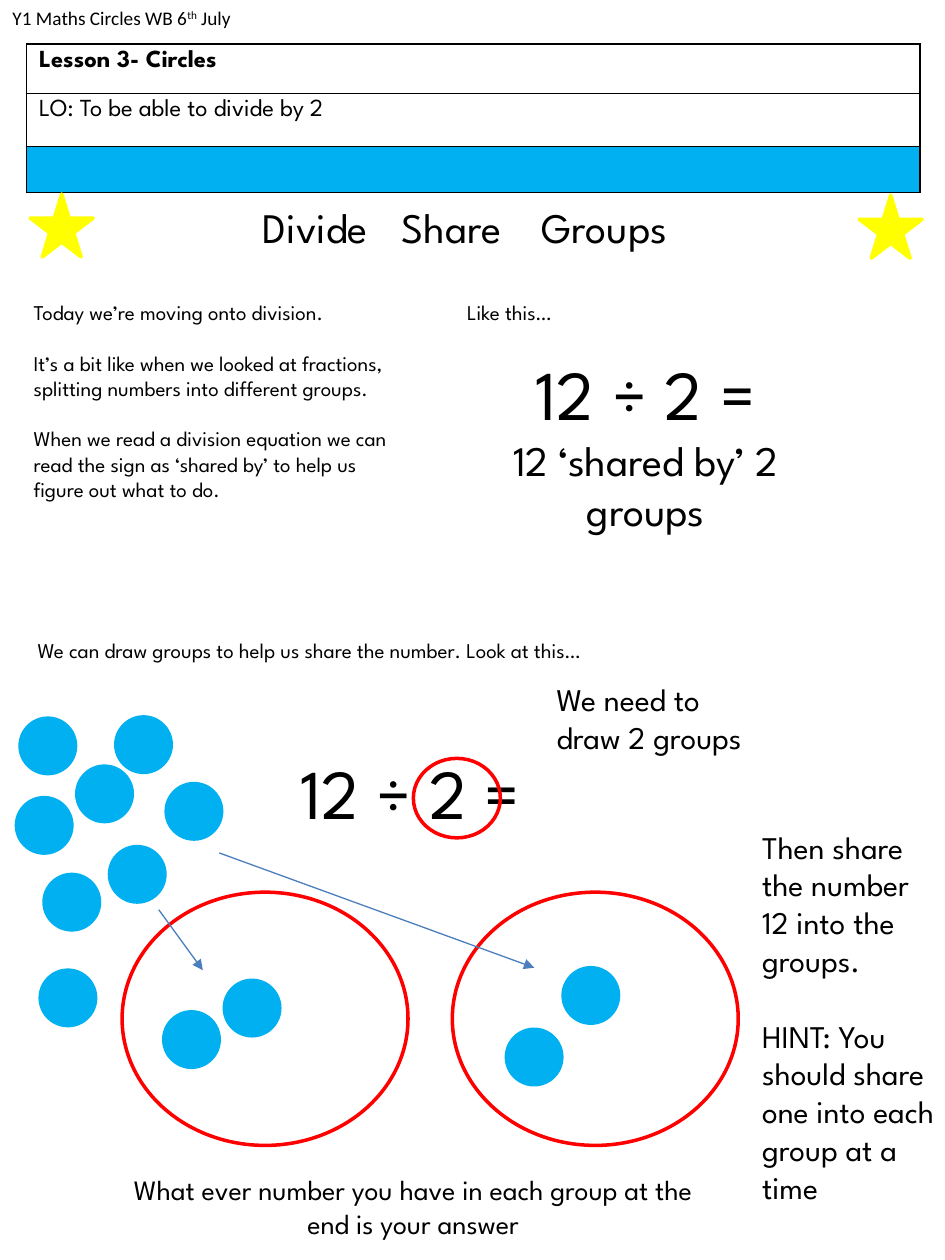
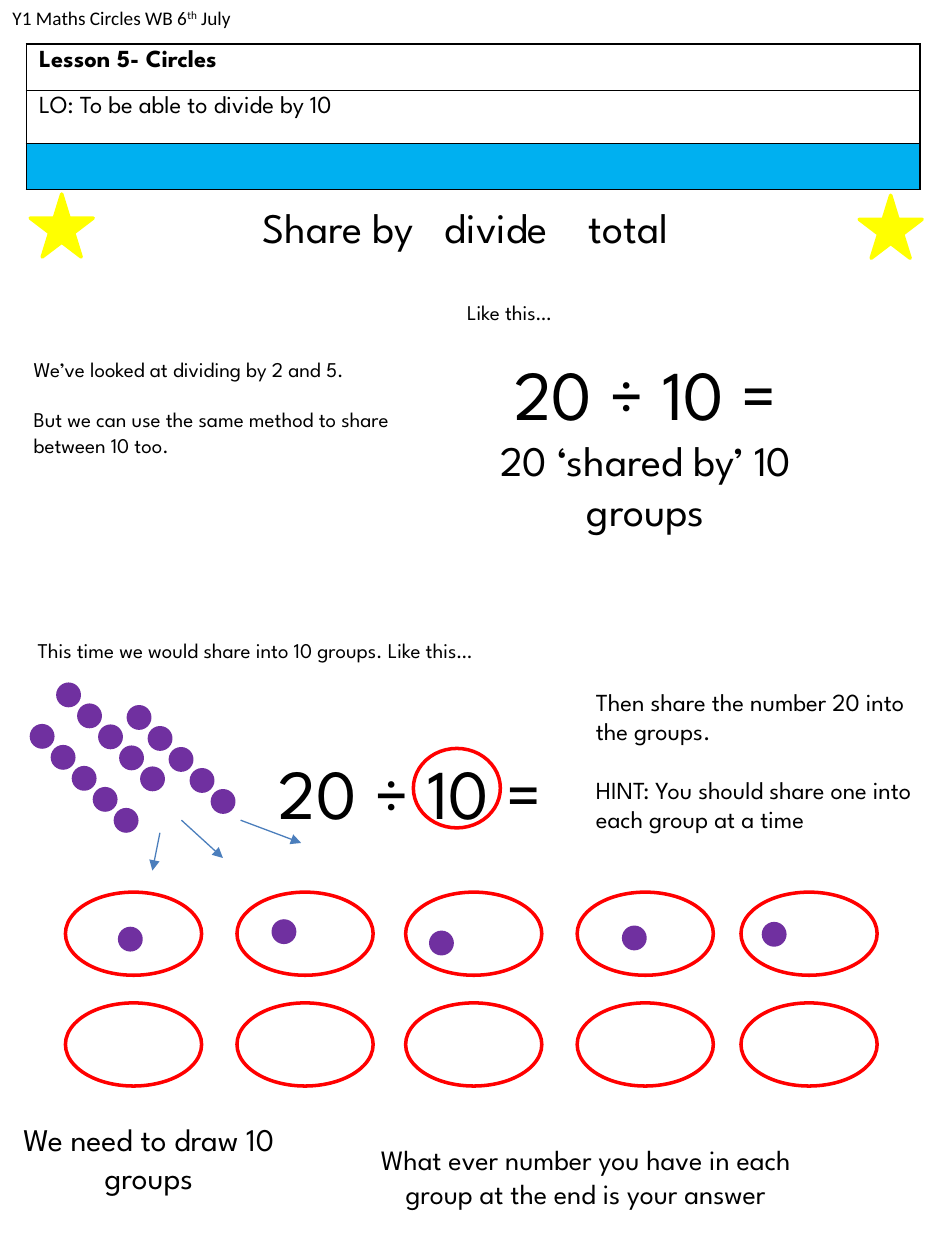
from dataclasses import dataclass

from lxml import etree
from pptx import Presentation
from pptx.dml.color import RGBColor
from pptx.enum import shapes, text
from pptx.oxml import ns
from pptx.util import Pt


@dataclass(frozen=True)
class Theme:
    font: str = "League Spartan"
    header_font: str = "Calibri"
    ink: str = "000000"
    sky: str = "00B0F0"
    purple: str = "7030A0"
    star: str = "FFFF00"
    ring: str = "FF0000"
    arrow: str = "4B7EBC"
    header: int = 11
    body: int = 12
    heading: int = 14
    answer: int = 16
    prompt: int = 18
    keyword: int = 24
    equation: int = 40
    outline: float = 2
    blank_line: float = 1.2  # paragraph gap relative to type size


THEME = Theme()
LEFT, CENTER = text.PP_ALIGN.LEFT, text.PP_ALIGN.CENTER
MSO = shapes.MSO_SHAPE


def rgb(value):
    return RGBColor.from_string(value)


def points(*values):
    return [Pt(value) for value in values]


def style(paragraph, size, align=LEFT, face=THEME.font, bold=False):
    paragraph.alignment = align
    font = paragraph.font
    font.name, font.size, font.bold = face, Pt(size), bold
    font.color.rgb = rgb(THEME.ink)


# Text
def add_box(slide, box):
    frame = slide.shapes.add_textbox(*points(*box)).text_frame
    frame.word_wrap = True
    return frame


def add_text(slide, box, size, *lines, align=LEFT):
    """Add paragraphs separated by the height of one line."""
    frame = add_box(slide, box)
    for index, line in enumerate(lines):
        paragraph = frame.paragraphs[0] if index == 0 else frame.add_paragraph()
        paragraph.text = line
        style(paragraph, size, align)
        if index:
            paragraph.space_before = Pt(size * THEME.blank_line)
    return frame


def add_header(slide):
    paragraph = add_box(slide, (0, 0, 287.3, 20.9)).paragraphs[0]
    style(paragraph, THEME.header, face=THEME.header_font)
    for words in ("Y1 Maths Circles WB 6", "th", " July"):
        run = paragraph.add_run()
        run.text = words
        if words == "th":
            run._r.get_or_add_rPr().set("baseline", "30000")


def add_keywords(slide, words, stops):
    """Put the keywords in the title, spaced with tab stops."""
    title = slide.shapes.title
    title.left, title.top, title.width, title.height = points(12.2, 111.6, 510.5, 36)
    frame = title.text_frame
    frame.auto_size = text.MSO_AUTO_SIZE.NONE
    frame.vertical_anchor = text.MSO_ANCHOR.TOP
    frame.margin_left = Pt(138)
    paragraph = frame.paragraphs[0]
    paragraph.text = "\t".join(words)
    style(paragraph, THEME.keyword)
    properties = paragraph._p.get_or_add_pPr()
    tabs = etree.Element(ns.qn("a:tabLst"))
    for stop in stops:
        etree.SubElement(tabs, ns.qn("a:tab"), pos=str(Pt(stop)), algn="l")
    properties.find(ns.qn("a:defRPr")).addprevious(tabs)


def add_example(slide, equation, reading):
    frame = add_text(slide, (259.9, 167.8, 218.2, 172), THEME.body, "Like this…")
    for line, size in ((equation, THEME.equation), (reading, THEME.keyword)):
        paragraph = frame.add_paragraph()
        paragraph.text = line
        style(paragraph, size, CENTER)
    frame.paragraphs[1].space_before = Pt(THEME.body * THEME.blank_line)


# Lesson table
def add_borders(cell):
    properties = cell._tc.get_or_add_tcPr()
    for side in ("lnL", "lnR", "lnT", "lnB"):
        edge = etree.SubElement(properties, ns.qn(f"a:{side}"), w=str(Pt(1)))
        fill = etree.SubElement(edge, ns.qn("a:solidFill"))
        etree.SubElement(fill, ns.qn("a:srgbClr"), val=THEME.ink)


def add_lesson_table(slide, lesson, objective, lesson_height):
    heights = (lesson_height, 30.3, 26.5)
    frame = slide.shapes.add_table(3, 1, *points(15.1, 25.2, 510.5, sum(heights)))
    table = frame.table
    table.first_row = table.horz_banding = False
    for index, words in enumerate((lesson, objective, "")):
        table.rows[index].height = Pt(heights[index])
        cell = table.cell(index, 0)
        cell.text = words
        style(cell.text_frame.paragraphs[0], THEME.heading, bold=index == 0)
        add_borders(cell)
        if words:
            cell.fill.background()
        else:
            cell.margin_top = cell.margin_bottom = 0
            cell.fill.solid()
            cell.fill.fore_color.rgb = rgb(THEME.sky)


# Drawn parts
def add_figure(slide, kind, box, line, fill=None):
    figure = slide.shapes.add_shape(kind, *points(*box))
    figure.shadow.inherit = False
    figure.line.color.rgb = rgb(line)
    figure.line.width = Pt(THEME.outline)
    if fill:
        figure.fill.solid()
        figure.fill.fore_color.rgb = rgb(fill)
    else:
        figure.fill.background()


def add_ring(slide, *box):
    add_figure(slide, MSO.OVAL, box, THEME.ring)


def add_counters(slide, places, size, color):
    for left, top in places:
        add_figure(slide, MSO.OVAL, (left, top, size, size), color, color)


def add_arrow(slide, *ends):
    arrow = slide.shapes.add_connector(shapes.MSO_CONNECTOR.STRAIGHT, *points(*ends))
    arrow.line.color.rgb = rgb(THEME.arrow)
    arrow.line.width = Pt(0.75)
    etree.SubElement(arrow.line._get_or_add_ln(), ns.qn("a:tailEnd"), type="triangle")
    etree.SubElement(arrow._element.spPr, ns.qn("a:effectLst"))


# Parts shared by every lesson
def add_lesson(deck, lesson, objective, lesson_height, keywords, stops,
               equation, reading, method, divisor_top):
    slide = deck.slides.add_slide(deck.slide_layouts[5])
    add_lesson_table(slide, lesson, objective, lesson_height)
    add_keywords(slide, keywords, stops)
    for left, top in ((491, 111.6), (17.3, 110.9)):
        add_figure(slide, MSO.STAR_5_POINT, (left, top, 36, 36), THEME.star, THEME.star)
    add_header(slide)
    add_example(slide, equation, reading)
    add_text(slide, (14.4, 360.7, 508.3, 51), THEME.body, method)
    add_text(slide, (125.3, 424.8, 218.2, 85), THEME.equation, equation, align=CENTER)
    add_ring(slide, 236.2, divisor_top, 49.7, 45.4)
    return slide


HINT = "HINT: You should share one into each group at a time"
ANSWER = "What ever number you have in each group at the end is your answer"


def build_divide_by_two(deck):
    slide = add_lesson(
        deck, "Lesson 3- Circles", "LO: To be able to divide by 2", 28.2,
        ("Divide", "Share", "Groups"), (79.4, 159.4),
        "12 ÷ 2 =", "12 ‘shared by’ 2 groups",
        "We can draw groups to help us share the number. Look at this…", 433.4)
    add_text(slide, (12.2, 167.8, 218.2, 181.4), THEME.body,
             "Today we’re moving onto division.",
             "It’s a bit like when we looked at fractions, "
             "splitting numbers into different groups.",
             "When we read a division equation we can read the sign as "
             "‘shared by’ to help us figure out what to do.")
    add_text(slide, (311, 385.2, 124.6, 72.7), THEME.prompt, "We need to draw 2 groups")

    # Two groups and twelve counters
    for left in (69.8, 258.5):
        add_ring(slide, left, 509.8, 163.4, 144.7)
    waiting = [(11.5, 410.4), (43.9, 437.8), (9.4, 455.8), (66.2, 409.7),
               (62.6, 483.8), (95, 447.8), (25.2, 499.7), (23, 554.4)]
    shared = [(128.2, 560.2), (93.6, 578.2), (289.4, 588.2), (321.8, 553)]
    add_counters(slide, waiting + shared, 31.7, THEME.sky)
    add_arrow(slide, 125.3, 487.4, 305.3, 553)
    add_arrow(slide, 90.7, 519.8, 115.9, 554.4)

    add_text(slide, (428.4, 469.4, 116.6, 247), THEME.prompt,
             "Then share the number 12 into the groups.", HINT)
    add_text(slide, (59, 666.7, 354.2, 46), THEME.answer, ANSWER, align=CENTER)


def build_divide_by_ten(deck):
    slide = add_lesson(
        deck, "Lesson 5- Circles", "LO: To be able to divide by 10", 26.5,
        ("Share by", "divide", "total"), (104, 186.3),
        "20 ÷ 10 =", "20 ‘shared by’ 10 groups",
        "This time we would share into 10 groups. Like this…", 427.7)
    add_text(slide, (12.2, 200.2, 218.2, 108.7), THEME.body,
             "We’ve looked at dividing by 2 and 5.",
             "But we can use the same method to share between 10 too.")
    add_text(slide, (2.2, 636.5, 165.6, 51), THEME.prompt,
             "We need to draw 10 groups", align=CENTER)
    add_text(slide, (333.4, 388.8, 195.8, 108.7), THEME.heading,
             "Then share the number 20 into the groups.", HINT)
    add_text(slide, (192.2, 649.4, 285.1, 65.5), THEME.answer, ANSWER, align=CENTER)

    # Ten groups in two rows
    for top in (509.8, 573.1):
        for left in (37.4, 135.4, 231.8, 329.8, 423.4):
            add_ring(slide, left, top, 77.8, 47.5)

    # Three diagonals of five waiting counters, then one in each upper group
    diagonals = ((18, 414.7), (33.1, 391), (73.4, 403.9))
    waiting = [(left + 12 * step, top + 12 * step)
               for left, top in diagonals for step in range(5)]
    shared = [(68.4, 530.6), (156.2, 526.3), (246.2, 532.8),
              (356.4, 529.9), (436.3, 527.8)]
    add_counters(slide, waiting + shared, 12.2, THEME.purple)
    add_arrow(slide, 103.7, 468.7, 127.4, 490.3)
    add_arrow(slide, 91.4, 475.9, 87.1, 497.5)
    add_arrow(slide, 137.5, 468.7, 172.1, 481.7)


def main():
    deck = Presentation()
    deck.slide_width, deck.slide_height = points(540, 720)
    build_divide_by_two(deck)
    build_divide_by_ten(deck)
    deck.save("out.pptx")


if __name__ == "__main__":
    main()
